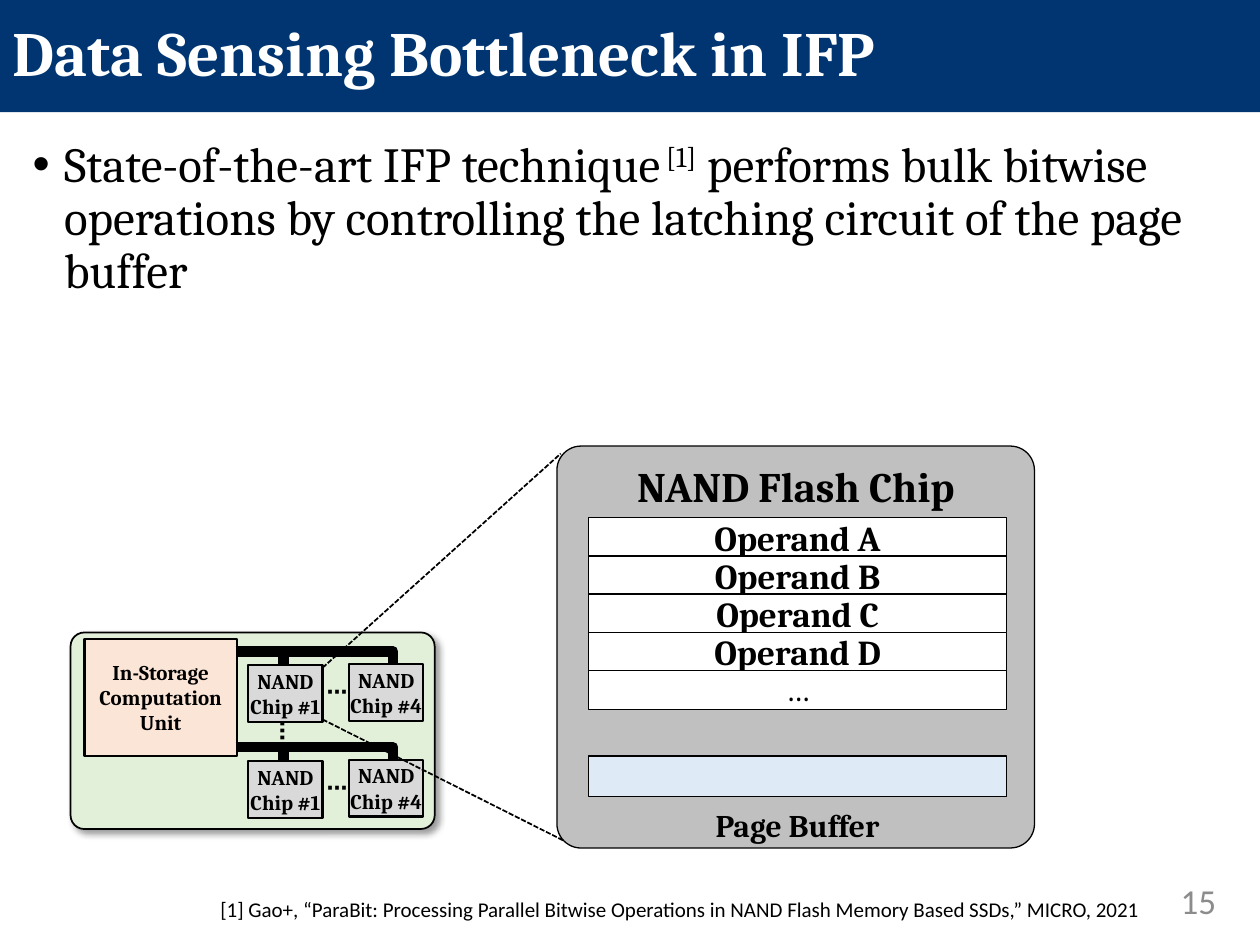
from dataclasses import dataclass

import lxml.etree
import pptx
import pptx.dml.color
import pptx.enum.dml
import pptx.enum.shapes
import pptx.enum.text
import pptx.oxml
import pptx.oxml.ns
import pptx.util

Inches = pptx.util.Inches
Shapes = pptx.enum.shapes.MSO_SHAPE
Connectors = pptx.enum.shapes.MSO_CONNECTOR
Align = pptx.enum.text.PP_ALIGN
Anchor = pptx.enum.text.MSO_ANCHOR
AutoSize = pptx.enum.text.MSO_AUTO_SIZE
qn = pptx.oxml.ns.qn


@dataclass(frozen=True)
class Theme:
    serif: str = "Cambria"
    sans: str = "Calibri"
    symbol: str = "Arial"
    black: str = "000000"
    white: str = "FFFFFF"
    banner: str = "003572"
    page_number: str = "8C8C8C"
    storage: str = "E2F0D9"
    computation: str = "FBE5D6"
    nand: str = "D9D9D9"
    flash_chip: str = "C0C0C0"
    buffer: str = "DEEBF7"
    title_size: int = 36
    body_size: int = 28
    heading_size: int = 24
    operand_size: int = 20
    label_size: int = 18
    small_size: int = 12


THEME = Theme()


def rgb(value):
    return pptx.dml.color.RGBColor.from_string(value)


def write_text(shape, *lines, size, font=THEME.serif, color=THEME.black, bold=False,
               align=Align.CENTER, anchor=Anchor.MIDDLE, margins=(0, 0), wrap=True,
               auto_size=AutoSize.NONE, line_spacing=None, bullet_indent=None):
    """Each line is one paragraph: a string, or a list of (text, baseline) runs."""
    frame = shape.text_frame
    frame.word_wrap, frame.auto_size, frame.vertical_anchor = wrap, auto_size, anchor
    frame.margin_left = frame.margin_right = Inches(margins[0])
    frame.margin_top = frame.margin_bottom = Inches(margins[1])
    for index, line in enumerate(lines):
        paragraph = frame.paragraphs[0] if index == 0 else frame.add_paragraph()
        paragraph.alignment = align
        paragraph.space_before = pptx.util.Pt(0)
        if line_spacing:
            paragraph.line_spacing = line_spacing
        if bullet_indent:
            properties = paragraph._p.get_or_add_pPr()
            properties.set("marL", str(Inches(bullet_indent)))
            properties.set("indent", str(-Inches(bullet_indent)))
            lxml.etree.SubElement(properties, qn("a:buFont")).set("typeface", THEME.symbol)
            lxml.etree.SubElement(properties, qn("a:buChar")).set("char", "•")
        for text, baseline in [(line, 0)] if isinstance(line, str) else line:
            run = paragraph.add_run()
            run.text = text
            run.font.name, run.font.size, run.font.bold = font, pptx.util.Pt(size), bold
            run.font.color.rgb = rgb(color)
            if baseline:
                run._r.get_or_add_rPr().set("baseline", str(baseline * 1000))


class SlideBuilder:
    def __init__(self, slide, theme):
        self.slide, self.theme = slide, theme
        self.shapes = slide.shapes

    def start_group(self):
        self.shapes = self.slide.shapes.add_group_shape().shapes

    def end_group(self):
        self.shapes = self.slide.shapes

    def placeholder(self, index, box, *lines, fill=None, **text_format):
        shape = self.slide.placeholders[index]
        shape.left, shape.top, shape.width, shape.height = map(Inches, box)
        if fill:
            shape.fill.solid()
            shape.fill.fore_color.rgb = rgb(fill)
        write_text(shape, *lines, margins=(0.1, 0.05), align=Align.LEFT,
                   line_spacing=0.9, **text_format)

    def box(self, box, fill, *lines, radius=None, line_width=0.75, **text_format):
        kind = Shapes.RECTANGLE if radius is None else Shapes.ROUNDED_RECTANGLE
        shape = self.shapes.add_shape(kind, *map(Inches, box))
        if radius is not None:
            shape.adjustments[0] = radius
        shape.shadow.inherit = False
        shape.fill.solid()
        shape.fill.fore_color.rgb = rgb(fill)
        shape.line.color.rgb = rgb(self.theme.black)
        shape.line.width = pptx.util.Pt(line_width)
        if lines:
            write_text(shape, *lines, **text_format)
        return shape

    def label(self, box, text, rotation=0, **text_format):
        shape = self.shapes.add_textbox(*map(Inches, box))
        shape.rotation = rotation
        write_text(shape, text, **text_format)

    def line(self, start, end, width, dashed=False, bent=False):
        """A bent line runs across first, then down."""
        kind = Connectors.ELBOW if bent else Connectors.STRAIGHT
        connector = self.shapes.add_connector(kind, *map(Inches, start + end))
        connector.line.color.rgb = rgb(self.theme.black)
        connector.line.width = pptx.util.Pt(width)
        properties = connector._element.spPr
        if bent:
            properties.find(qn("a:prstGeom")).set("prst", "bentConnector2")
        if dashed:
            connector.line.dash_style = pptx.enum.dml.MSO_LINE.SQUARE_DOT
        lxml.etree.SubElement(properties, qn("a:effectLst"))

    def drop_shadow(self, shape):
        effects = shape._element.spPr.find(qn("a:effectLst"))
        effects.append(pptx.oxml.parse_xml(
            '<a:outerShdw xmlns:a="http://schemas.openxmlformats.org/drawingml/2006/main" '
            'blurRad="50800" dist="38100" dir="2700000" algn="tl" rotWithShape="0">'
            f'<a:srgbClr val="{self.theme.black}"><a:alpha val="40000"/></a:srgbClr>'
            '</a:outerShdw>'))


def draw_storage(builder):
    theme = builder.theme
    small = dict(size=theme.small_size, bold=True)
    dots = dict(small, font=theme.symbol, wrap=False)
    builder.start_group()
    storage = builder.box((0.56, 5.02, 2.89, 1.56), theme.storage, radius=0.07, line_width=1)
    builder.drop_shadow(storage)
    builder.box((0.67, 5.07, 1.21, 0.93), theme.computation, "In-Storage Computation Unit",
                radius=0, line_width=1.25, margins=(0.1, 0.04), **small)
    for bus_top in (5.17, 5.93):
        builder.line((1.87, bus_top), (3.12, bus_top + 0.09), 6, bent=True)
        builder.line((2.25, bus_top), (2.25, bus_top + 0.2), 6)
        builder.label((2.6, bus_top + 0.23, 0.15, 0.17), "⋯", **dots)
        for number, left, offset in ((1, 1.97, 0.11), (4, 2.77, 0.1)):
            builder.box((left, bus_top + offset, 0.59, 0.45), theme.nand,
                        "NAND", f"Chip #{number}", line_width=1.25,
                        margins=(0, 0.05), wrap=False, **small)
    builder.label((2.15, 5.74, 0.2, 0.12), "⋯", rotation=90, **dots)
    builder.end_group()
    builder.line((2.56, 5.3), (4.45, 3.6), 1, dashed=True)
    builder.line((2.56, 5.71), (4.53, 6.7), 1, dashed=True)


def draw_flash_chip(builder):
    theme = builder.theme
    left, width = 4.67, 3.32
    builder.start_group()
    builder.box((4.42, 3.54, 3.79, 3.19), theme.flash_chip, "NAND Flash Chip", radius=0.06,
                size=theme.heading_size, bold=True, anchor=Anchor.TOP, margins=(0, 0.06))
    builder.label((5.48, 6.35, 1.7, 0.4), "Page Buffer", size=theme.label_size, bold=True,
                  anchor=Anchor.TOP, margins=(0.1, 0.05), auto_size=AutoSize.SHAPE_TO_FIT_TEXT)
    builder.box((left, 6, width, 0.32), theme.buffer)
    builder.end_group()

    first_top, last_top, operands = 4.11, 5.32, "ABCD"
    pitch = (last_top - first_top) / len(operands)
    for row, name in enumerate(operands):
        builder.box((left, first_top + row * pitch, width, 0.31), theme.white,
                    f"Operand {name}", size=theme.operand_size, bold=True)
    builder.box((left, last_top, width, 0.31), theme.white, "…",
                size=theme.label_size, anchor=Anchor.TOP)


def main():
    presentation = pptx.Presentation()
    presentation.slide_width, presentation.slide_height = Inches(10), Inches(7.5)
    slide = presentation.slides.add_slide(presentation.slide_layouts[1])
    builder = SlideBuilder(slide, THEME)
    builder.placeholder(0, (0, 0, 10, 0.89), "Data Sensing Bottleneck in IFP", fill=THEME.banner,
                        size=THEME.title_size, color=THEME.white, bold=True)
    builder.placeholder(
        1, (0.16, 1.06, 9.67, 2.07),
        [("State-of-the-art IFP technique", 0), (" [1]", 30),
         (" performs bulk bitwise operations by controlling the latching circuit "
          "of the page buffer", 0)],
        size=THEME.body_size, anchor=Anchor.TOP, bullet_indent=0.25)
    draw_storage(builder)
    draw_flash_chip(builder)
    builder.label((1.65, 7.07, 7.56, 0.5),
                  "[1] Gao+, “ParaBit: Processing Parallel Bitwise Operations in NAND Flash "
                  "Memory Based SSDs,” MICRO, 2021",
                  size=THEME.small_size, font=THEME.sans, align=Align.LEFT, anchor=Anchor.TOP,
                  margins=(0.1, 0.05), auto_size=AutoSize.SHAPE_TO_FIT_TEXT)
    builder.label((8.67, 6.95, 1.08, 0.4), "15", size=THEME.operand_size, font=THEME.sans,
                  color=THEME.page_number, align=Align.RIGHT, margins=(0.1, 0.05))
    presentation.save("out.pptx")


if __name__ == "__main__":
    main()
